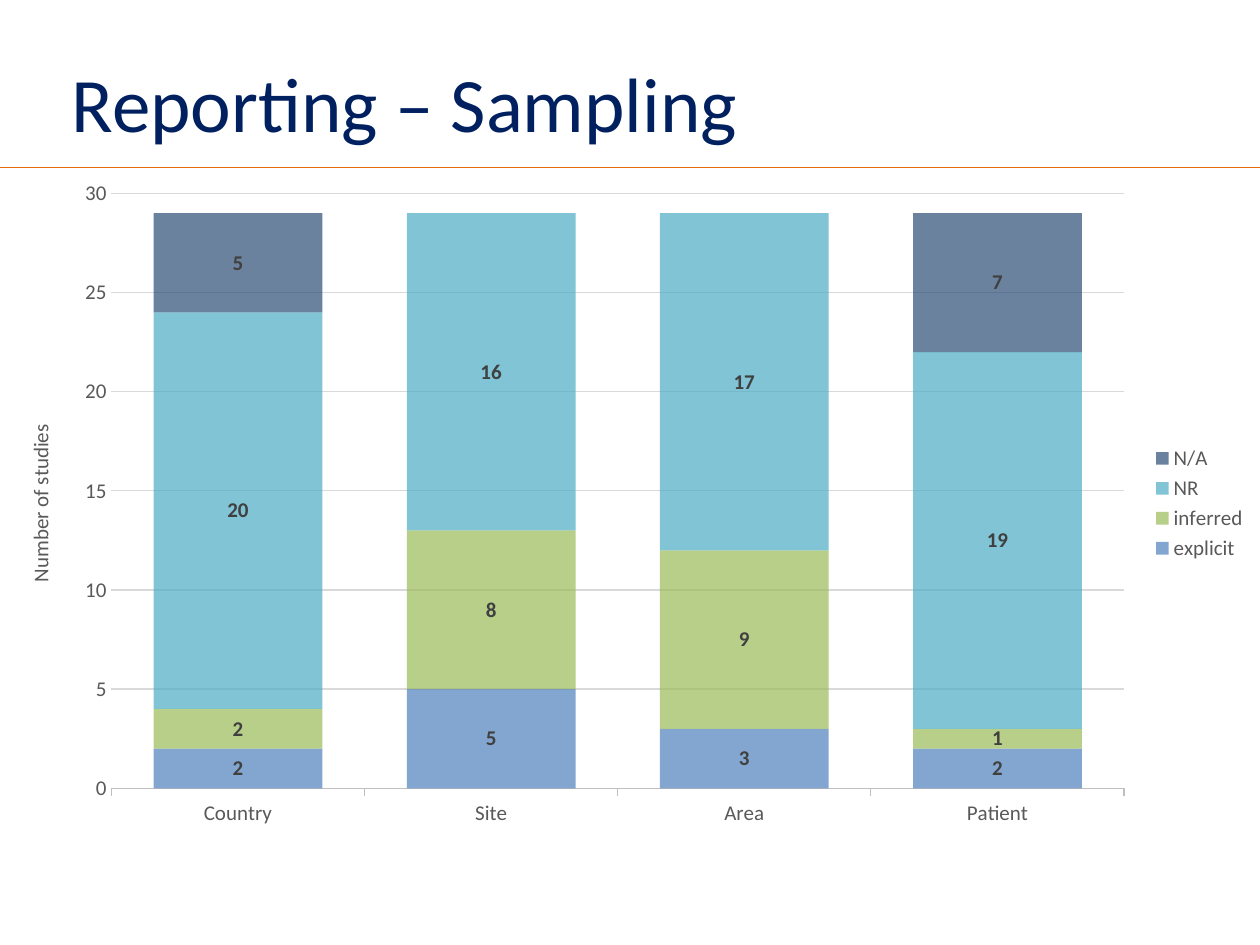
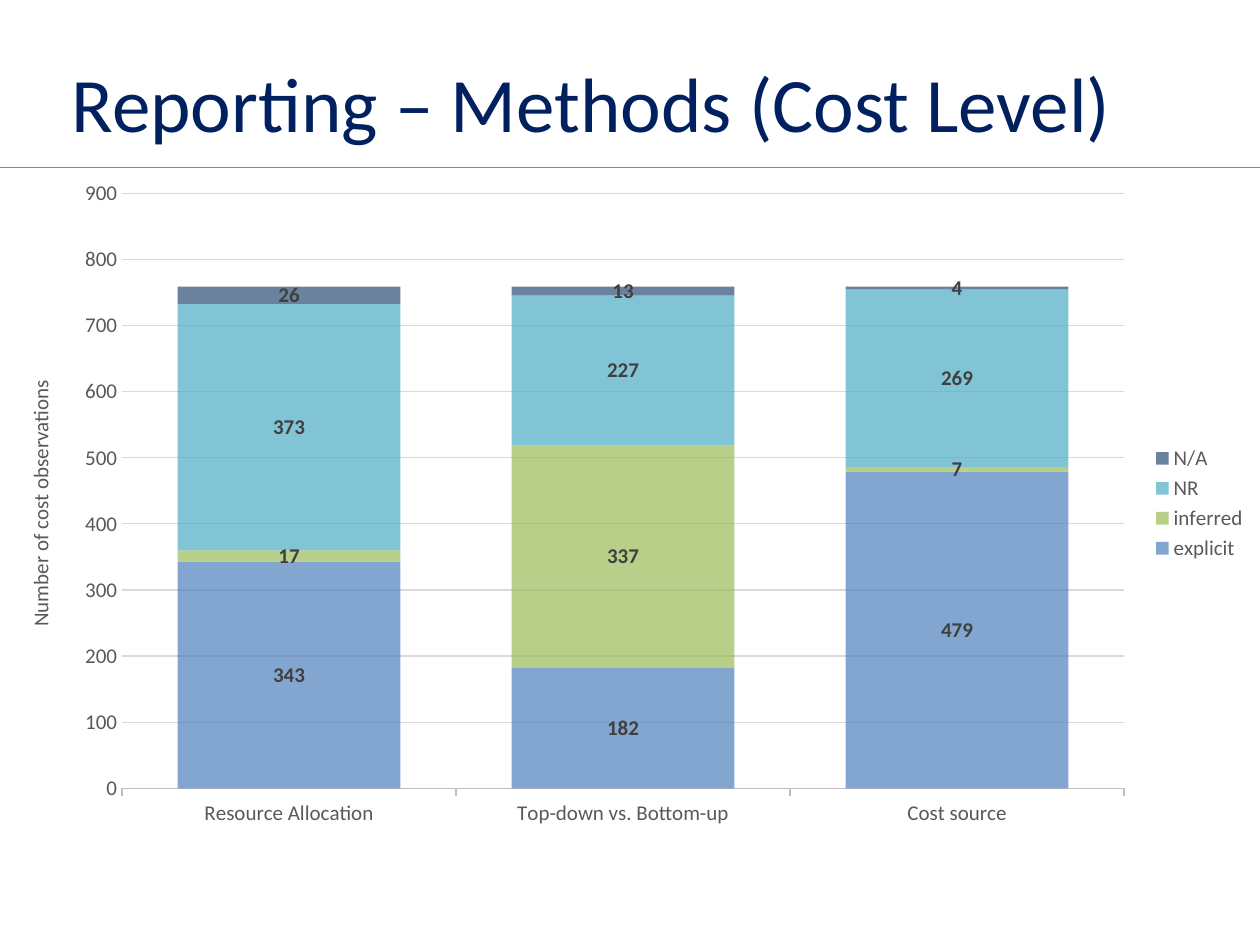
from lxml import etree
from pptx import Presentation
from pptx.chart.data import CategoryChartData
from pptx.dml.color import RGBColor
from pptx.enum import chart as ch, shapes, text
from pptx.oxml.ns import qn
from pptx.util import Inches, Pt

FONT = "Calibri"
NAVY, ORANGE = "002060", "E46C0A"
AXIS_TEXT, LABEL_TEXT, AXIS_LINE, GRID = "595959", "404040", "BFBFBF", "D9D9D9"
RATINGS = {"explicit": "4F81BD", "inferred": "9BBB59", "NR": "4BACC6", "N/A": "2C4D75"}
OPACITY = 70
RULE_Y = 1.33

SLIDES = [
    {
        "title": "Reporting – Sampling",
        "unit": "Number of studies",
        "top": 30,
        "step": 5,
        "counts": {  # one count per rating
            "Country": (2, 2, 20, 5),
            "Site": (5, 8, 16, 0),
            "Area": (3, 9, 17, 0),
            "Patient": (2, 1, 19, 7),
        },
    },
    {
        "title": "Reporting – Methods (Cost Level)",
        "unit": "Number of cost observations",
        "top": 900,
        "step": 100,
        "counts": {
            "Resource Allocation": (343, 17, 373, 26),
            "Top-down vs. Bottom-up": (182, 337, 227, 13),
            "Cost source": (479, 7, 269, 4),
        },
    },
]


def rgb(hex_color):
    return RGBColor.from_string(hex_color)


def style_font(font, size, color, bold=False):
    font.name, font.size, font.bold = FONT, Pt(size), bold
    font.color.rgb = rgb(color)


def style_line(line, color, width):
    line.color.rgb = rgb(color)
    line.width = Pt(width)


def add_header(slide, title):
    rule = slide.shapes.add_connector(
        shapes.MSO_CONNECTOR.STRAIGHT, 0, Inches(RULE_Y), Inches(10), Inches(RULE_Y))
    style_line(rule.line, ORANGE, 1)
    etree.SubElement(rule.element.spPr, qn("a:effectLst"))

    heading = slide.shapes.add_textbox(
        Inches(0.47), Inches(0.29), Inches(9.03), Inches(1.04)).text_frame
    heading.word_wrap = True
    heading.vertical_anchor = text.MSO_ANCHOR.MIDDLE
    run = heading.paragraphs[0].add_run()
    run.text = title
    style_font(run.font, 44, NAVY)


def style_axes(chart, unit, top, step):
    categories, values = chart.category_axis, chart.value_axis
    for axis in (categories, values):
        style_font(axis.tick_labels.font, 12, AXIS_TEXT)
    categories.major_tick_mark = ch.XL_TICK_MARK.OUTSIDE
    style_line(categories.format.line, AXIS_LINE, 0.75)

    values.minimum_scale, values.maximum_scale, values.major_unit = 0, top, step
    values.major_tick_mark = ch.XL_TICK_MARK.NONE
    values.format.line.fill.background()
    style_line(values.major_gridlines.format.line, GRID, 0.75)
    run = values.axis_title.text_frame.paragraphs[0].add_run()
    run.text = unit
    style_font(run.font, 12, AXIS_TEXT)
    body = values.axis_title.element.find(".//" + qn("a:bodyPr"))
    body.set("rot", "-5400000")
    body.set("vert", "horz")


def style_series(chart):
    plot = chart.plots[0]
    plot.gap_width, plot.overlap, plot.vary_by_categories = 50, 100, False
    for series, color in zip(plot.series, RATINGS.values()):
        series.format.fill.solid()
        series.format.fill.fore_color.rgb = rgb(color)
        labels = series.data_labels
        labels.show_value = True
        labels.position = ch.XL_LABEL_POSITION.CENTER
        labels.number_format, labels.number_format_is_linked = "0;;", False  # hides zeros
        style_font(labels.font, 12, LABEL_TEXT, bold=True)
    for fill in chart.element.xpath(".//c:ser/c:spPr/a:solidFill/a:srgbClr"):
        etree.SubElement(fill, qn("a:alpha"), val=str(OPACITY * 1000))


def add_ratings_chart(slide, unit, top, step, counts):
    data = CategoryChartData()
    data.categories = list(counts)
    for rating, values in zip(RATINGS, zip(*counts.values())):
        data.add_series(rating, values)
    chart = slide.shapes.add_chart(
        ch.XL_CHART_TYPE.COLUMN_STACKED,
        0, Inches(RULE_Y), Inches(10), Inches(5.33), data).chart
    style_font(chart.font, 10, "000000")
    chart.has_title = False
    chart.has_legend = True
    chart.legend.position = ch.XL_LEGEND_POSITION.RIGHT
    chart.legend.include_in_layout = False
    style_font(chart.legend.font, 12, AXIS_TEXT)
    style_axes(chart, unit, top, step)
    style_series(chart)


def main():
    deck = Presentation()
    deck.slide_width, deck.slide_height = Inches(10), Inches(7.5)
    for content in SLIDES:
        slide = deck.slides.add_slide(deck.slide_layouts[6])
        add_header(slide, content["title"])
        add_ratings_chart(
            slide, content["unit"], content["top"], content["step"], content["counts"])
    deck.save("out.pptx")


if __name__ == "__main__":
    main()
